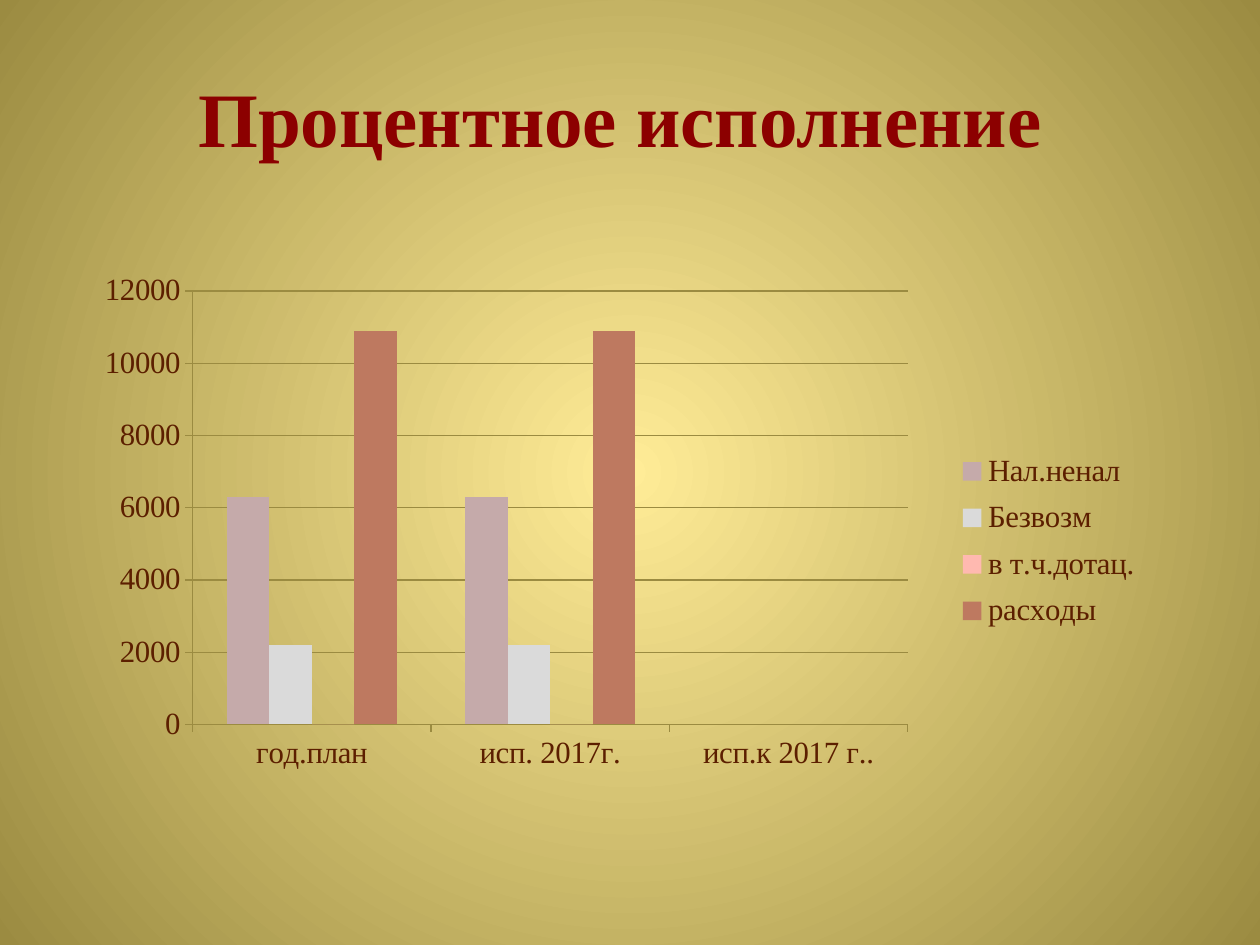
import pptx
import pptx.chart.data
import pptx.dml.color
import pptx.enum.chart
import pptx.enum.text
import pptx.oxml
import pptx.oxml.ns
import pptx.util

Cm = pptx.util.Cm
Pt = pptx.util.Pt
RGBColor = pptx.dml.color.RGBColor
qn = pptx.oxml.ns.qn

TITLE = "Процентное исполнение "
CATEGORIES = ["год.план", "исп. 2017г.", "исп.к 2017 г.."]
SERIES = [
    ("Нал.ненал", (6300, 6300, None), RGBColor(0xC5, 0xAA, 0xAA)),
    ("Безвозм", (2200, 2200, None), RGBColor(0xDA, 0xDA, 0xDA)),
    ("в т.ч.дотац.", (0, 0, None), RGBColor(0xFF, 0xB9, 0xB0)),
    ("расходы", (10900, 10900, None), RGBColor(0xBE, 0x79, 0x60)),
]
FONT = "Times New Roman"
TITLE_RED = RGBColor(0x8C, 0x00, 0x00)
BROWN = RGBColor(0x5C, 0x1F, 0x00)
CENTRE = RGBColor(0xFF, 0xEC, 0x97)
EDGE = RGBColor(0x9B, 0x8B, 0x41)


def set_background(slide):
    fill = slide.background.fill
    fill.gradient()
    for stop, color, position in zip(fill.gradient_stops, (CENTRE, EDGE), (0, 1)):
        stop.color.rgb = color
        stop.position = position
    lin = slide.background._cSld.find(".//" + qn("a:lin"))
    lin.getparent().replace(lin, pptx.oxml.parse_xml(
        '<a:path xmlns:a="http://schemas.openxmlformats.org/drawingml/2006/main" path="circle">'
        '<a:fillToRect l="50000" t="50000" r="50000" b="50000"/></a:path>'))


def set_layout(parent, index, box, inner=False):
    for old in parent.findall(qn("c:layout")):
        parent.remove(old)
    target = '<c:layoutTarget val="inner"/>' if inner else ""
    modes = '<c:xMode val="edge"/><c:yMode val="edge"/>'
    sizes = "".join(f'<c:{k} val="{v}"/>' for k, v in zip("xywh", box))
    parent.insert(index, pptx.oxml.parse_xml(
        '<c:layout xmlns:c="http://schemas.openxmlformats.org/drawingml/2006/chart">'
        f"<c:manualLayout>{target}{modes}{sizes}</c:manualLayout></c:layout>"))


def add_title(slide):
    sp = slide.shapes.title
    sp.left, sp.top, sp.width, sp.height = Cm(1.27), Cm(0.76), Cm(22.86), Cm(3.18)
    tf = sp.text_frame
    tf.text = TITLE
    tf.vertical_anchor = pptx.enum.text.MSO_ANCHOR.MIDDLE
    p = tf.paragraphs[0]
    p.alignment = pptx.enum.text.PP_ALIGN.CENTER
    p.font.name, p.font.size, p.font.bold = FONT, Pt(44), True
    p.font.color.rgb = TITLE_RED


def add_budget_chart(slide):
    data = pptx.chart.data.CategoryChartData()
    data.categories = CATEGORIES
    for name, values, _ in SERIES:
        data.add_series(name, values)
    chart = slide.shapes.add_chart(
        pptx.enum.chart.XL_CHART_TYPE.COLUMN_CLUSTERED,
        Cm(1.7), Cm(5.31), Cm(21.84), Cm(11.2), data).chart
    chart.has_title = False
    chart.font.name, chart.font.size = FONT, Pt(17.6)
    chart.font.color.rgb = BROWN

    plot = chart.plots[0]
    plot.gap_width, plot.overlap = 160, 0
    plot.vary_by_categories = False
    for series, (_, _, color) in zip(plot.series, SERIES):
        series.format.fill.solid()
        series.format.fill.fore_color.rgb = color

    chart.value_axis.has_major_gridlines = True
    chart.value_axis.minimum_scale, chart.value_axis.maximum_scale = 0, 12000
    chart.value_axis.major_unit = 2000
    for axis in (chart.category_axis, chart.value_axis):
        axis.major_tick_mark = pptx.enum.chart.XL_TICK_MARK.OUTSIDE
        axis.format.line.color.rgb = EDGE
    chart.category_axis.tick_label_position = pptx.enum.chart.XL_TICK_LABEL_POSITION.LOW
    chart.value_axis.major_gridlines.format.line.color.rgb = EDGE

    chart.has_legend = True
    chart.legend.position = pptx.enum.chart.XL_LEGEND_POSITION.RIGHT
    chart.legend.include_in_layout = False
    set_layout(chart._chartSpace.chart.plotArea, 0, (0.1, 0.05, 0.66, 0.78), inner=True)
    set_layout(chart.legend._element, 1, (0.8, 0.32, 0.18, 0.36))


def main():
    prs = pptx.Presentation()
    prs.slide_width, prs.slide_height = Cm(25.4), Cm(19.05)
    slide = prs.slides.add_slide(prs.slide_layouts.get_by_name("Title Only"))
    set_background(slide)
    add_title(slide)
    add_budget_chart(slide)
    prs.save("out.pptx")


if __name__ == "__main__":
    main()
